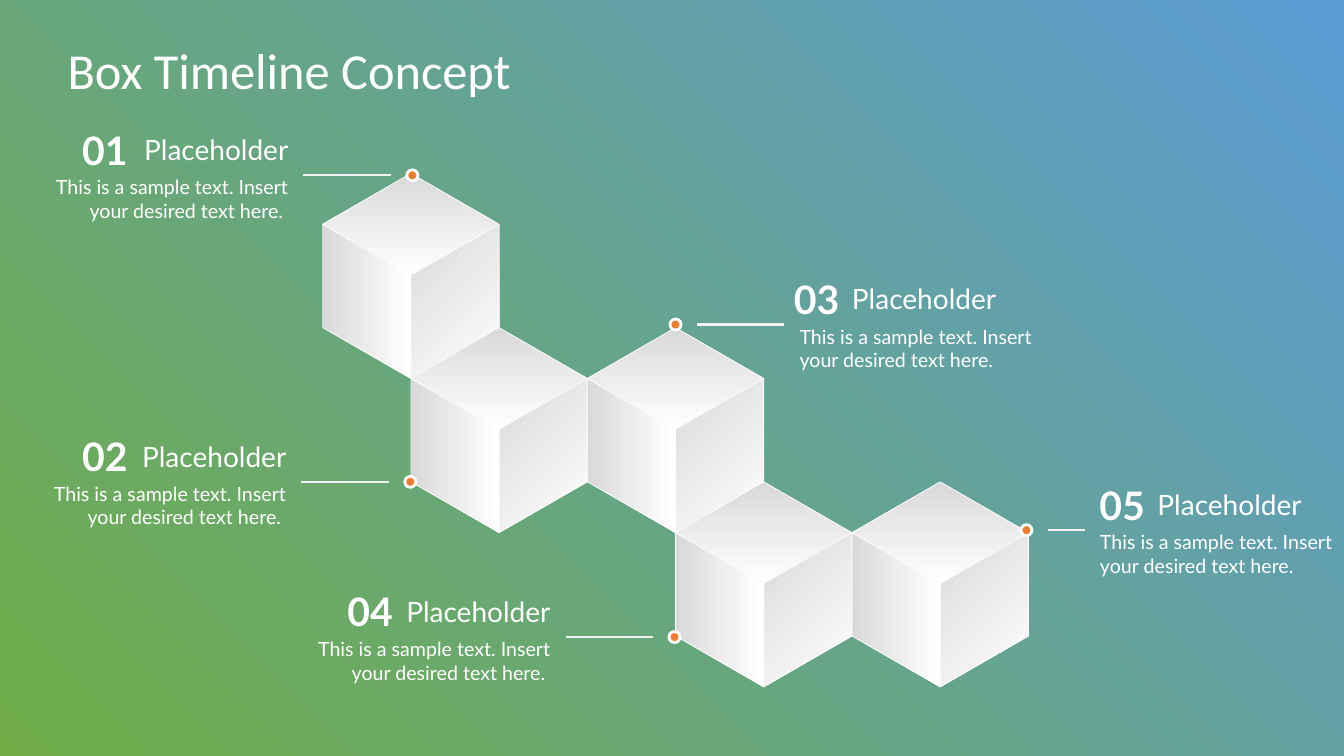
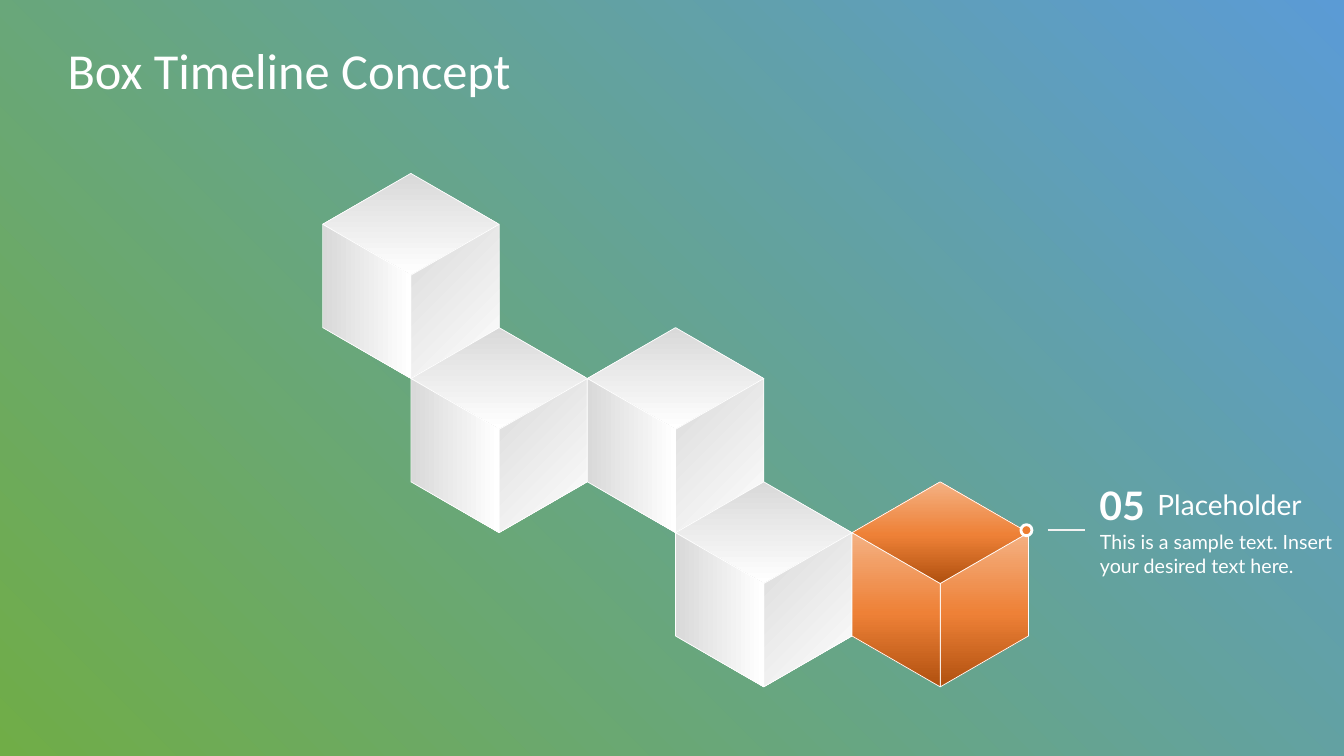
from dataclasses import dataclass

from lxml.etree import SubElement
from pptx import Presentation
from pptx.dml.color import RGBColor
from pptx.enum.shapes import MSO_CONNECTOR, MSO_SHAPE
from pptx.enum.text import MSO_ANCHOR, MSO_AUTO_SIZE, PP_ALIGN
from pptx.oxml.ns import qn
from pptx.util import Inches, Pt

WHITE = "FFFFFF"
LINE_GREY = "F2F2F2"
ORANGE = "ED7D31"
BACKDROP = [(0, "70AD47"), (100, "5B9BD5")]
GREY_FADE = [(0, "D9D9D9"), (100, WHITE)]
ORANGE_FADE = [(0, "B0500F"), (48, "EE8137"), (100, "F4B183")]
GREY_FACES = [(GREY_FADE, 90), (GREY_FADE, 45), (GREY_FADE, 0)]
ORANGE_FACES = [(ORANGE_FADE, 270)] * 3

TITLE = "Box Timeline Concept"
HEADING = "Placeholder"
SAMPLE = "This is a sample text. Insert your desired text here."
TITLE_FONT = "Calibri"
TEXT_FONT = "Lato"

COLUMN = 1.75 / 2
ROW = 1.53
RISE = 1.01 / 2
ORIGIN_X, ORIGIN_Y = 3.2 + COLUMN, 1.72
CUBES = [(0, 0), (1, 1), (3, 1), (4, 2), (6, 2)]

DOT = 0.11
DOT_GAP = 0.21
TEXT_GAP = 0.15
TEXT_WIDTH = 2.58
NUMBER_WIDTH = 0.6
HEADING_INDENT = 0.35


@dataclass
class Caption:
    number: str
    dot_x: float
    dot_y: float
    number_center: float
    side: int
    arm: float = 0.87


CAPTIONS = [
    Caption("01", 4.09, 1.74, 1.04, -1),
    Caption("02", 4.07, 4.78, 1.04, -1),
    Caption("03", 6.7, 3.22, 8.1, 1),
    Caption("04", 6.69, 6.32, 3.67, -1),
    Caption("05", 10.18, 5.26, 11.13, 1, 0.37),
]


def color(code):
    return RGBColor.from_string(code)


def fill_gradient(fill, element, stops, angle):
    fill.gradient()
    fill.gradient_angle = -angle % 360
    stop_list = element.find(".//" + qn("a:gsLst"))
    for stop in list(stop_list):
        stop_list.remove(stop)
    for position, code in stops:
        stop = SubElement(stop_list, qn("a:gs"), pos=str(position * 1000))
        SubElement(stop, qn("a:srgbClr"), val=code)


def set_line(shape, code, width):
    shape.line.color.rgb = color(code)
    shape.line.width = Pt(width)


def style_text(shape, text, size, font, anchor, align, bold=False):
    frame = shape.text_frame
    frame.margin_left = frame.margin_right = 0
    frame.margin_top = frame.margin_bottom = 0
    frame.vertical_anchor = anchor
    frame.word_wrap = True
    frame.text = text
    paragraph = frame.paragraphs[0]
    paragraph.alignment = align
    paragraph.font.size = Pt(size)
    paragraph.font.name = font
    paragraph.font.bold = bold
    paragraph.font.color.rgb = color(WHITE)
    return frame


def add_text(page, left, top, width, height, text, size, anchor, align, bold=False):
    box = page.shapes.add_textbox(*map(Inches, (left, top, width, height)))
    frame = style_text(box, text, size, TEXT_FONT, anchor, align, bold)
    frame.auto_size = MSO_AUTO_SIZE.SHAPE_TO_FIT_TEXT


def add_face(group, corners, stops, angle):
    points = [(Inches(x), Inches(y)) for x, y in corners]
    builder = group.shapes.build_freeform(*points[0])
    builder.add_line_segments(points[1:], close=True)
    face = builder.convert_to_shape()
    face.shadow.inherit = False
    fill_gradient(face.fill, face.element, stops, angle)
    set_line(face, WHITE, 0.5)


def add_cube(page, column, row, faces):
    middle, top = ORIGIN_X + column * COLUMN, ORIGIN_Y + row * ROW
    left, right = middle - COLUMN, middle + COLUMN
    shoulder, center, floor = top + RISE, top + 2 * RISE, top + RISE + ROW
    outlines = [[(middle, center), (left, shoulder), (middle, top), (right, shoulder)]]
    for side in (right, left):
        outlines.append([(middle, floor), (middle, center), (side, shoulder), (side, floor - RISE)])
    group = page.shapes.add_group_shape()
    for corners, (stops, angle) in zip(outlines, faces):
        add_face(group, corners, stops, angle)


def add_dot(page, x, y):
    bounds = (x - DOT / 2, y - DOT / 2, DOT, DOT)
    dot = page.shapes.add_shape(MSO_SHAPE.OVAL, *map(Inches, bounds))
    dot.shadow.inherit = False
    dot.fill.solid()
    dot.fill.fore_color.rgb = color(ORANGE)
    set_line(dot, WHITE, 2)


def add_arm(page, start, end, y):
    arm = page.shapes.add_connector(MSO_CONNECTOR.STRAIGHT, *map(Inches, (start, y, end, y)))
    set_line(arm, LINE_GREY, 1.5)
    SubElement(arm.element.spPr, qn("a:effectLst"))


def add_caption(page, caption):
    x, y, side = caption.dot_x, caption.dot_y, caption.side
    arm_start = x + side * DOT_GAP
    arm_end = arm_start + side * caption.arm
    text_edge = arm_end + side * TEXT_GAP
    if side > 0:
        align, sample, text_left = PP_ALIGN.LEFT, SAMPLE, text_edge
        heading_left, heading_width = caption.number_center + HEADING_INDENT, 1.85
    else:
        align, sample, text_left = PP_ALIGN.RIGHT, SAMPLE + " ", text_edge - TEXT_WIDTH
        heading_left, heading_width = text_left, TEXT_WIDTH
    add_text(page, caption.number_center - NUMBER_WIDTH / 2, y - 0.49, NUMBER_WIDTH, 0.47,
             caption.number, 28, MSO_ANCHOR.MIDDLE, PP_ALIGN.CENTER, True)
    add_text(page, heading_left, y - 0.43, heading_width, 0.34, HEADING, 20, MSO_ANCHOR.BOTTOM, align)
    add_text(page, text_left, y, TEXT_WIDTH, 0.47, sample, 14, MSO_ANCHOR.TOP, align)
    add_arm(page, arm_start, arm_end, y)
    add_dot(page, x, y)


def add_title(page):
    title = page.shapes.title
    title.left, title.top, title.width, title.height = map(Inches, (0.67, 0.3, 12, 0.78))
    frame = style_text(title, TITLE, 36, TITLE_FONT, MSO_ANCHOR.MIDDLE, PP_ALIGN.LEFT)
    frame.auto_size = MSO_AUTO_SIZE.NONE


def add_timeline(deck, captions, highlight=None):
    page = deck.slides.add_slide(deck.slide_layouts[5])
    add_title(page)
    for index, (column, row) in enumerate(CUBES):
        add_cube(page, column, row, ORANGE_FACES if index == highlight else GREY_FACES)
    for caption in captions:
        add_caption(page, caption)


def main():
    deck = Presentation()
    deck.slide_width, deck.slide_height = Inches(13.33), Inches(7.5)
    master = deck.slide_master
    fill_gradient(master.background.fill, master.element, BACKDROP, 315)
    add_timeline(deck, CAPTIONS)
    add_timeline(deck, CAPTIONS[-1:], highlight=len(CUBES) - 1)
    deck.save("out.pptx")


if __name__ == "__main__":
    main()
